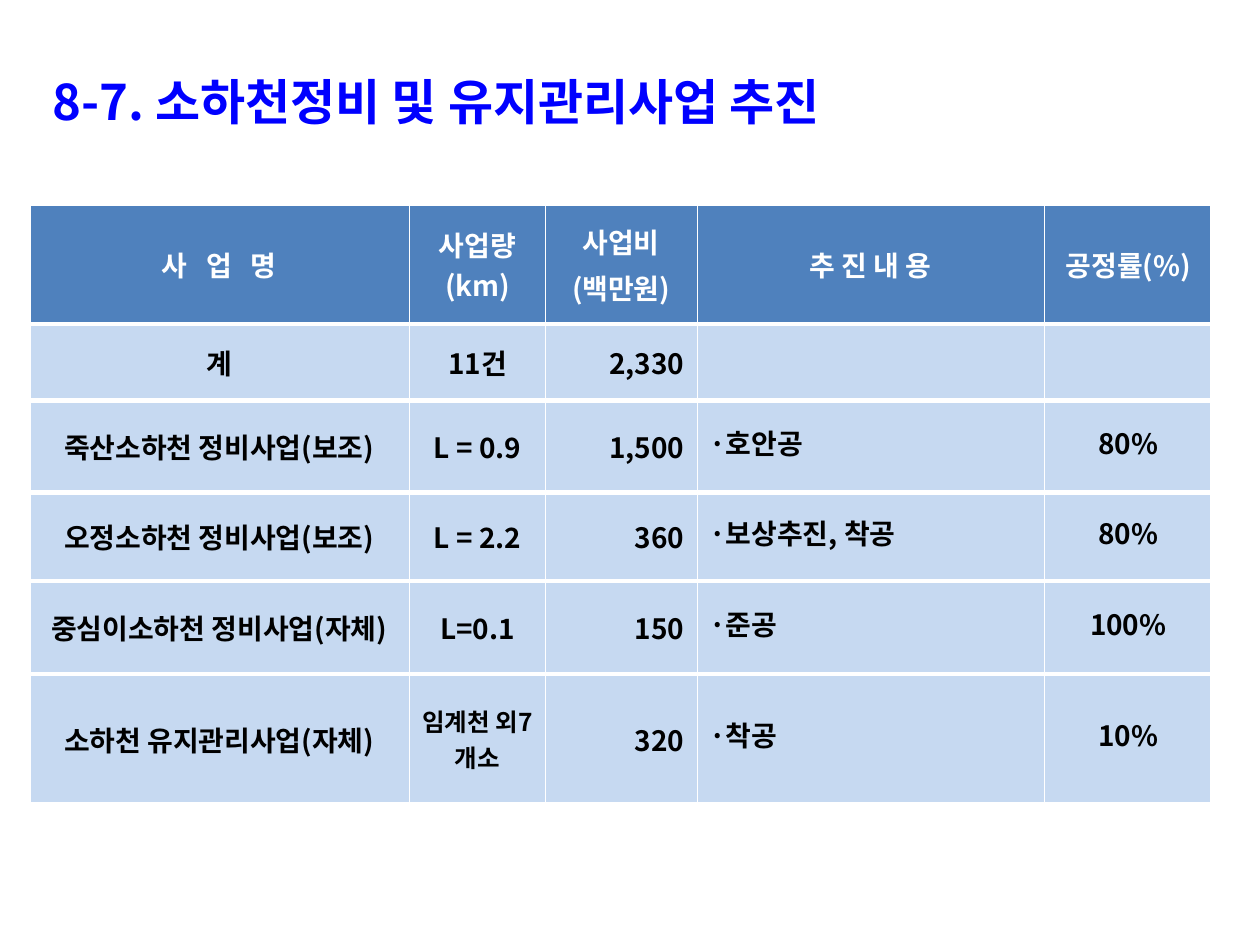
from dataclasses import dataclass

import pptx
import pptx.dml.color
import pptx.enum.text
import pptx.oxml
import pptx.oxml.ns
import pptx.util

Inches = pptx.util.Inches
Pt = pptx.util.Pt
Align = pptx.enum.text.PP_ALIGN
Anchor = pptx.enum.text.MSO_ANCHOR

FONT = "Noto Sans CJK KR"
COLORS = {
    "title": "0000FF",
    "head": "4F81BD",
    "body": "C6D9F1",
    "white": "FFFFFF",
    "black": "000000",
}
THICK, THIN = 3, 0.25


@dataclass
class Column:
    head: str
    width: float
    align: Align
    lead: float | None = None


@dataclass
class Row:
    height: float
    texts: tuple[str, ...]


COLUMNS = [
    Column("사 업 명", 3.02, Align.CENTER),
    Column("사업량(km)", 1.08, Align.CENTER),
    Column("사업비\n(백만원)", 1.2, Align.RIGHT),
    Column("추 진 내 용", 2.76, Align.LEFT, 18),
    Column("공정률(%)", 1.33, Align.CENTER, 18),
]
ROWS = [
    Row(0.95, tuple(col.head for col in COLUMNS)),
    Row(0.61, ("계", "11건", "2,330", "", "")),
    Row(0.73, ("죽산소하천 정비사업(보조)", "L = 0.9", "1,500", "·호안공", "80%")),
    Row(0.7, ("오정소하천 정비사업(보조)", "L = 2.2", "360", "·보상추진, 착공", "80%")),
    Row(0.7, ("중심이소하천 정비사업(자체)", "L=0.1", "150", "·준공", "100%")),
    Row(1.03, ("소하천 유지관리사업(자체)", "임계천 외7개소", "320", "·착공", "10%")),
]
SIZES = {"임계천 외7개소": 14}
TRACKS = {"사 업 명": 3.6}


def rgb(name: str) -> pptx.dml.color.RGBColor:
    return pptx.dml.color.RGBColor.from_string(COLORS[name])


def add_run(para, text: str, size: float, color: str) -> None:
    run = para.add_run()
    run.text = text
    font = run.font
    font.size, font.bold, font.name = Pt(size), True, FONT
    font.color.rgb = rgb(color)
    props = run.font._element
    east = pptx.oxml.parse_xml(
        f'<a:ea {pptx.oxml.ns.nsdecls("a")} typeface="{FONT}"/>')
    props.find(pptx.oxml.ns.qn("a:latin")).addnext(east)
    if text in TRACKS:
        props.set("spc", str(round(TRACKS[text] * 100)))


def add_edge(cell, side: str, width: float) -> None:
    cell._tc.get_or_add_tcPr().append(pptx.oxml.parse_xml(
        f'<a:ln{side} {pptx.oxml.ns.nsdecls("a")} w="{Pt(width)}">'
        f'<a:solidFill><a:srgbClr val="{COLORS["white"]}"/></a:solidFill>'
        f'</a:ln{side}>'))


def fill_cell(cell, text: str, col: Column, pos: int, head: bool) -> None:
    add_edge(cell, "L", THICK if pos == 0 else THIN)
    add_edge(cell, "R", THICK if pos == len(COLUMNS) - 1 else THIN)
    add_edge(cell, "T", THICK)
    add_edge(cell, "B", THICK)
    cell.fill.solid()
    cell.fill.fore_color.rgb = rgb("head" if head else "body")
    cell.vertical_anchor = Anchor.MIDDLE
    if not text:
        return
    frame = cell.text_frame
    for num, line in enumerate(text.split("\n")):
        para = frame.add_paragraph() if num else frame.paragraphs[0]
        para.alignment = Align.CENTER if head else col.align
        if num:
            para.space_before = Pt(3.2)
        if col.lead and not head:
            para.line_spacing = Pt(col.lead)
        add_run(para, line, SIZES.get(line, 16), "white" if head else "black")


def add_title(slide, text: str) -> None:
    title = slide.shapes.title
    title.left, title.top = Inches(0.23), Inches(0.52)
    title.width, title.height = Inches(9.3), Inches(0.7)
    frame = title.text_frame
    frame.word_wrap = False
    frame.auto_size = pptx.enum.text.MSO_AUTO_SIZE.NONE
    frame.vertical_anchor = Anchor.TOP
    frame.margin_left = Inches(0.19)
    para = frame.paragraphs[0]
    para.alignment = Align.LEFT
    add_run(para, text, 28, "title")


def add_grid(slide) -> None:
    table = slide.shapes.add_table(
        len(ROWS), len(COLUMNS), Inches(0.23), Inches(1.62),
        Inches(sum(col.width for col in COLUMNS)),
        Inches(sum(row.height for row in ROWS))).table
    table.horz_banding = False
    for pos, col in enumerate(COLUMNS):
        table.columns[pos].width = Inches(col.width)
    for num, row in enumerate(ROWS):
        table.rows[num].height = Inches(row.height)
        for pos, (col, text) in enumerate(zip(COLUMNS, row.texts)):
            fill_cell(table.cell(num, pos), text, col, pos, num == 0)


def main() -> None:
    deck = pptx.Presentation()
    deck.slide_width, deck.slide_height = Inches(10), Inches(7.5)
    slide = deck.slides.add_slide(deck.slide_layouts.get_by_name("Title Only"))
    add_title(slide, "8-7. 소하천정비 및 유지관리사업 추진")
    add_grid(slide)
    deck.save("out.pptx")


if __name__ == "__main__":
    main()
